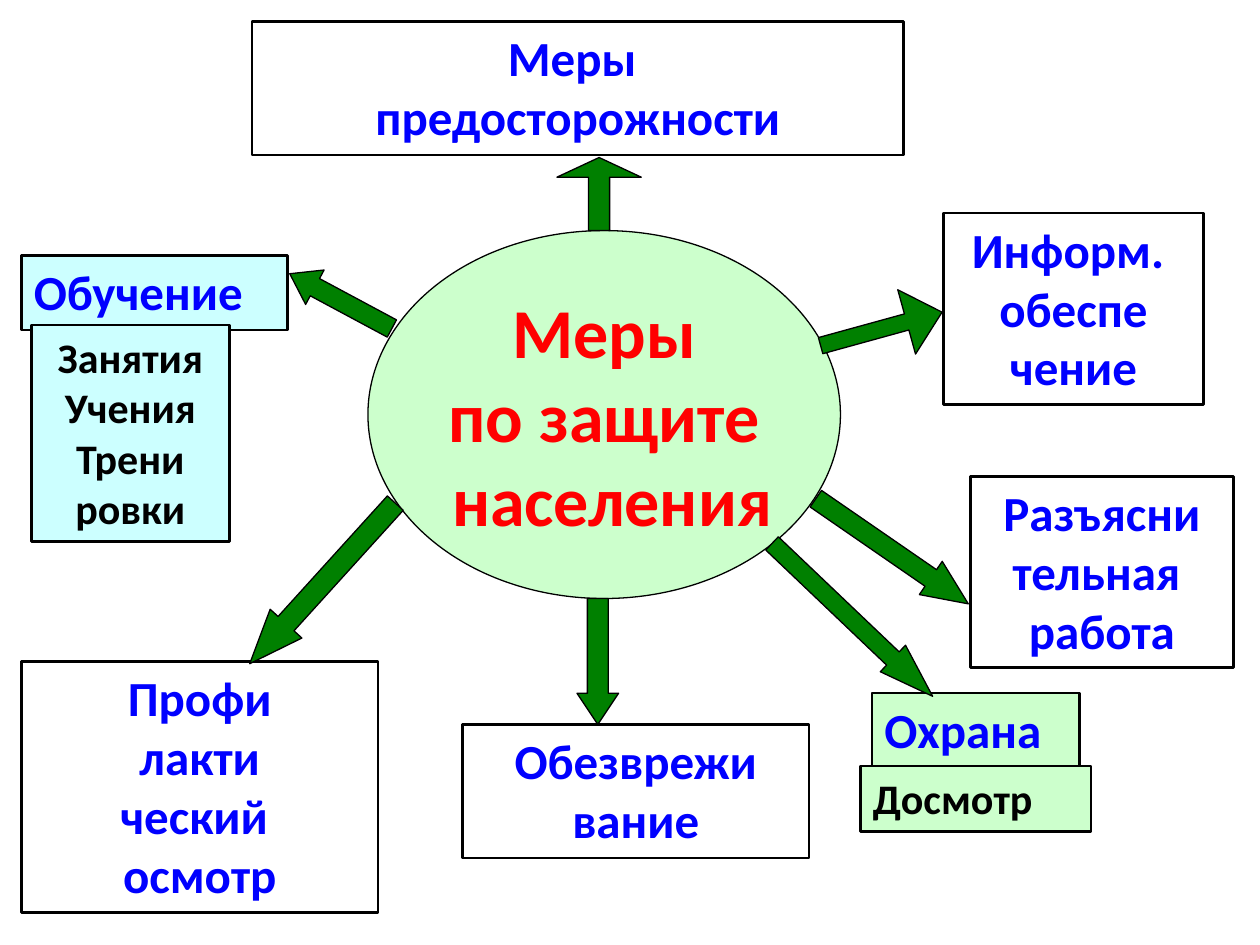
from typing import NamedTuple

from pptx import Presentation
from pptx.dml.color import RGBColor
from pptx.enum import shapes as kinds, text as txt
from pptx.util import Inches, Pt

BLACK, BLUE, RED = "000000", "0000FF", "FF0000"
WHITE, CYAN, MINT, GREEN = "FFFFFF", "CCFFFF", "CCFFCC", "008000"
KIND = kinds.MSO_SHAPE


class Box(NamedTuple):
    left: float
    top: float
    width: float
    height: float
    lines: list[str]
    fill: str = WHITE
    color: str = BLUE
    size: int = 28
    center: bool = True


class Arrow(NamedTuple):
    left: float
    top: float
    width: float
    height: float
    turn: float = 0
    shaft: float = 0.5
    head: float = 0.75
    kind: KIND = KIND.DOWN_ARROW


BOXES = [
    Box(2, 0.17, 5.17, 1.06, ["Меры ", "предосторожности"]),
    Box(0.17, 2.03, 2.11, 0.59, ["Обучение"], CYAN, center=False),
    Box(7.49, 1.69, 2.06, 1.52, ["Информ. ", "обеспе", "чение"]),
    Box(7.7, 3.78, 2.09, 1.52, ["Разъясни", "тельная ", "работа"]),
    Box(0.25, 2.58, 1.57, 1.72, ["Занятия", "Учения", "Трени", "ровки"],
        CYAN, BLACK, 24),
    Box(0.17, 5.25, 2.83, 1.99, ["Профи", "лакти", "ческий ", "осмотр"]),
    Box(6.92, 5.5, 1.65, 0.59, ["Охрана"], MINT, center=False),
    Box(3.67, 5.75, 2.75, 1.06, ["Обезврежи", "вание"]),
    Box(6.83, 6.08, 1.83, 0.52, ["Досмотр"], MINT, BLACK, 24, False),
]
HUB = Box(2.92, 1.83, 3.75, 2.92, ["Меры", "по защите", " населения"],
          MINT, RED, 40)
ARROWS = [
    Arrow(4.42, 1.25, 0.67, 0.58, 0, 0.25, 0.27, KIND.UP_ARROW),
    Arrow(6.73, 2.11, 0.53, 1, 254.6, 0.25, 0.55),
    Arrow(6.92, 3.64, 0.32, 1.47, 304.6, head=1.13),
    Arrow(4.58, 4.75, 0.33, 1),
    Arrow(2.39, 3.77, 0.34, 1.72, 42.2, head=1.26),
    Arrow(2.55, 1.93, 0.31, 0.92, 118.2, head=0.73),
    Arrow(6.62, 4.04, 0.29, 1.76, 313.6, head=1.5),
]


def paint(form, color: str) -> None:
    """Give a fill or a font a hex colour."""
    form.rgb = RGBColor.from_string(color)


def draw(slide, kind: KIND, item: Box | Arrow, fill: str, line: float):
    shape = slide.shapes.add_shape(
        kind, *map(Inches, (item.left, item.top, item.width, item.height)))
    shape.shadow.inherit = False
    shape.fill.solid()
    paint(shape.fill.fore_color, fill)
    paint(shape.line.color, BLACK)
    shape.line.width = Pt(line)
    return shape


def write(frame, lines: list[str], *, size: int, color: str, center: bool,
          wrap: bool = True, anchor=txt.MSO_ANCHOR.TOP) -> None:
    frame.word_wrap = wrap
    frame.vertical_anchor = anchor
    frame.text = "\n".join(lines)
    for para in frame.paragraphs:
        para.alignment = txt.PP_ALIGN.CENTER if center else txt.PP_ALIGN.LEFT
        font = para.runs[0].font
        font.name, font.size, font.bold = "Calibri", Pt(size), True
        paint(font.color, color)


def draw_box(slide, box: Box) -> None:
    shape = draw(slide, KIND.RECTANGLE, box, box.fill, 1.5)
    write(shape.text_frame, box.lines, size=box.size, color=box.color,
          center=box.center)


def draw_hub(slide, hub: Box) -> None:
    shape = draw(slide, KIND.OVAL, hub, hub.fill, 0.75)
    write(shape.text_frame, hub.lines, size=hub.size, color=hub.color,
          center=hub.center, wrap=False, anchor=txt.MSO_ANCHOR.MIDDLE)


def draw_arrow(slide, arrow: Arrow) -> None:
    shape = draw(slide, arrow.kind, arrow, GREEN, 0.75)
    shape.rotation = arrow.turn
    shape.adjustments[0] = arrow.shaft
    shape.adjustments[1] = arrow.head


def main() -> None:
    deck = Presentation()
    deck.slide_width, deck.slide_height = Inches(10), Inches(7.5)
    slide = deck.slides.add_slide(deck.slide_layouts[6])
    for box in BOXES:
        draw_box(slide, box)
    draw_hub(slide, HUB)
    for arrow in ARROWS:
        draw_arrow(slide, arrow)
    deck.save("out.pptx")


if __name__ == "__main__":
    main()
